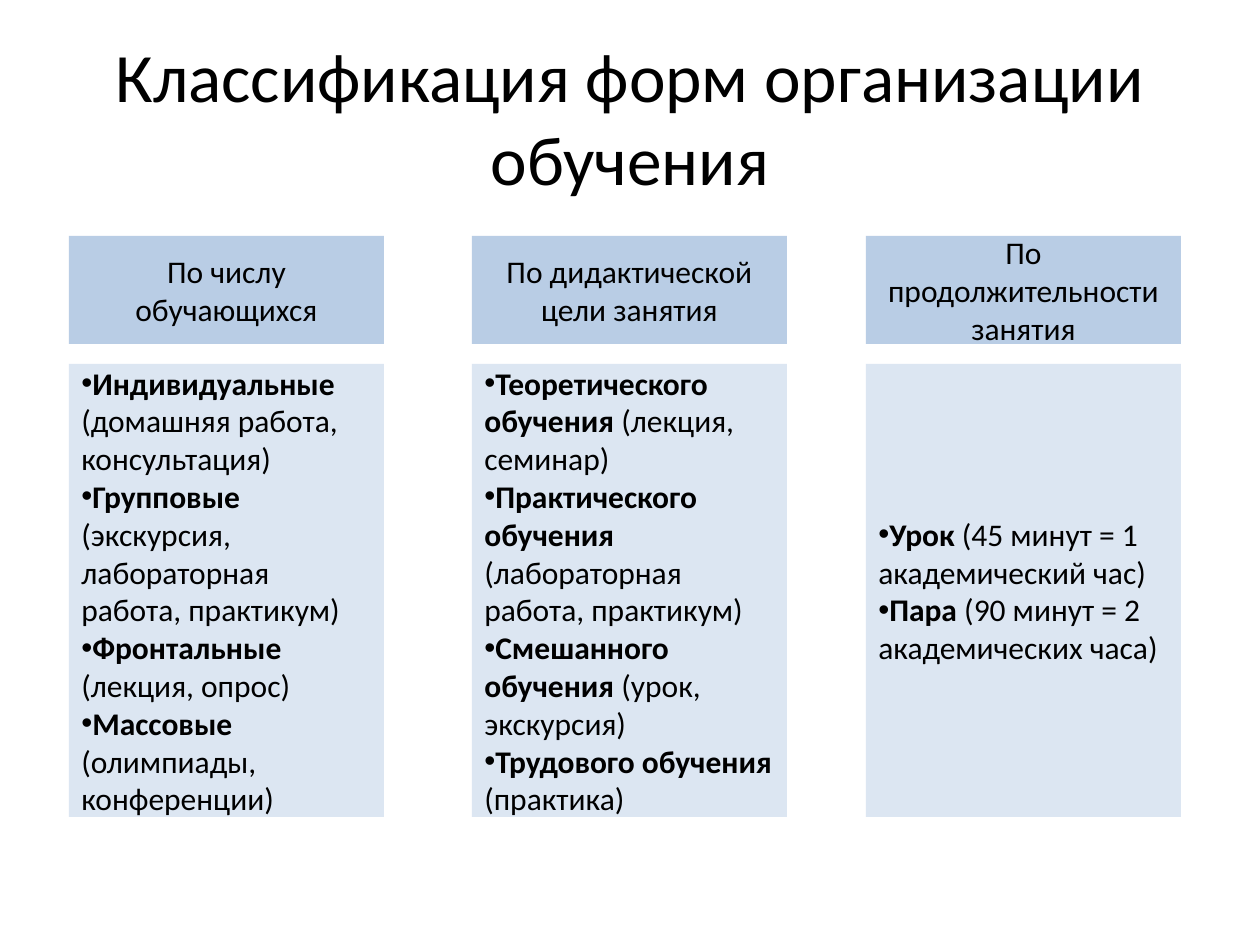
from lxml import etree
from pptx import Presentation
from pptx import util as u
from pptx.dml.color import RGBColor
from pptx.enum import shapes, text
from pptx.oxml.ns import qn

PX = u.Inches(1) / 126
BLACK = RGBColor(0x00, 0x00, 0x00)
BLUE = RGBColor(0xB9, 0xCD, 0xE5)
PALE = RGBColor(0xDC, 0xE6, 0xF2)
FONT = "Calibri"

WIDTH = 315
HEAD_H = 108
LIST_TOP = 128
LIST_H = 453

COLUMNS = [
    (69, "По числу обучающихся", [
        ("Индивидуальные", " (домашняя работа, консультация)"),
        ("Групповые ", "(экскурсия, лабораторная работа, практикум)"),
        ("Фронтальные ", "(лекция, опрос)"),
        ("Массовые ", "(олимпиады, конференции)"),
    ]),
    (472, "По дидактической цели занятия", [
        ("Теоретического обучения", " (лекция, семинар)"),
        ("Практического обучения ", "(лабораторная работа, практикум)"),
        ("Смешанного обучения ", "(урок, экскурсия)"),
        ("Трудового обучения ", "(практика)"),
    ]),
    (866, "По продолжительности занятия", [
        ("Урок ", "(45 минут = 1 академический час)"),
        ("Пара ", "(90 минут = 2 академических часа)"),
    ]),
]


def emu(*sizes):
    return [u.Emu(round(size * PX)) for size in sizes]


def style(run, size, bold=False):
    font = run.font
    font.name = FONT
    font.size = u.Pt(size)
    font.bold = bold
    font.color.rgb = BLACK


def bullet(para):
    props = para._p.get_or_add_pPr()
    props.set("marL", "0")
    props.set("indent", "0")
    etree.SubElement(props, qn("a:buFont"), typeface="Arial")
    etree.SubElement(props, qn("a:buChar"), char="•")


def add_title(slide, box, words):
    title = slide.shapes.title
    title.left, title.top, title.width, title.height = emu(*box)
    frame = title.text_frame
    frame.text = words
    frame.auto_size = text.MSO_AUTO_SIZE.NONE
    frame.vertical_anchor = text.MSO_ANCHOR.MIDDLE
    para = frame.paragraphs[0]
    para.alignment = text.PP_ALIGN.CENTER
    style(para.runs[0], 39.6)


def add_panel(slide, box, color):
    """Add a plain filled rectangle and return its text frame."""
    panel = slide.shapes.add_shape(shapes.MSO_SHAPE.RECTANGLE, *emu(*box))
    panel.shadow.inherit = False
    panel.fill.solid()
    panel.fill.fore_color.rgb = color
    panel.line.fill.background()
    frame = panel.text_frame
    frame.word_wrap = True
    frame.vertical_anchor = text.MSO_ANCHOR.MIDDLE
    return frame


def add_column(slide, left, top, head, items):
    frame = add_panel(slide, (left, top + LIST_TOP, WIDTH, LIST_H), PALE)
    for i, (name, detail) in enumerate(items):
        para = frame.add_paragraph() if i else frame.paragraphs[0]
        para.alignment = text.PP_ALIGN.LEFT
        bullet(para)
        for words, bold in ((name, True), (detail, False)):
            run = para.add_run()
            run.text = words
            style(run, 18, bold)

    frame = add_panel(slide, (left, top, WIDTH, HEAD_H), BLUE)
    frame.text = head
    para = frame.paragraphs[0]
    para.alignment = text.PP_ALIGN.CENTER
    style(para.runs[0], 18)


def main():
    deck = Presentation()
    deck.slide_width, deck.slide_height = emu(1260, 945)
    slide = deck.slides.add_slide(deck.slide_layouts[5])
    add_title(slide, (63, 38, 1134, 157), "Классификация форм организации обучения")
    for left, head, items in COLUMNS:
        add_column(slide, left, 236, head, items)
    deck.save("out.pptx")


if __name__ == "__main__":
    main()
